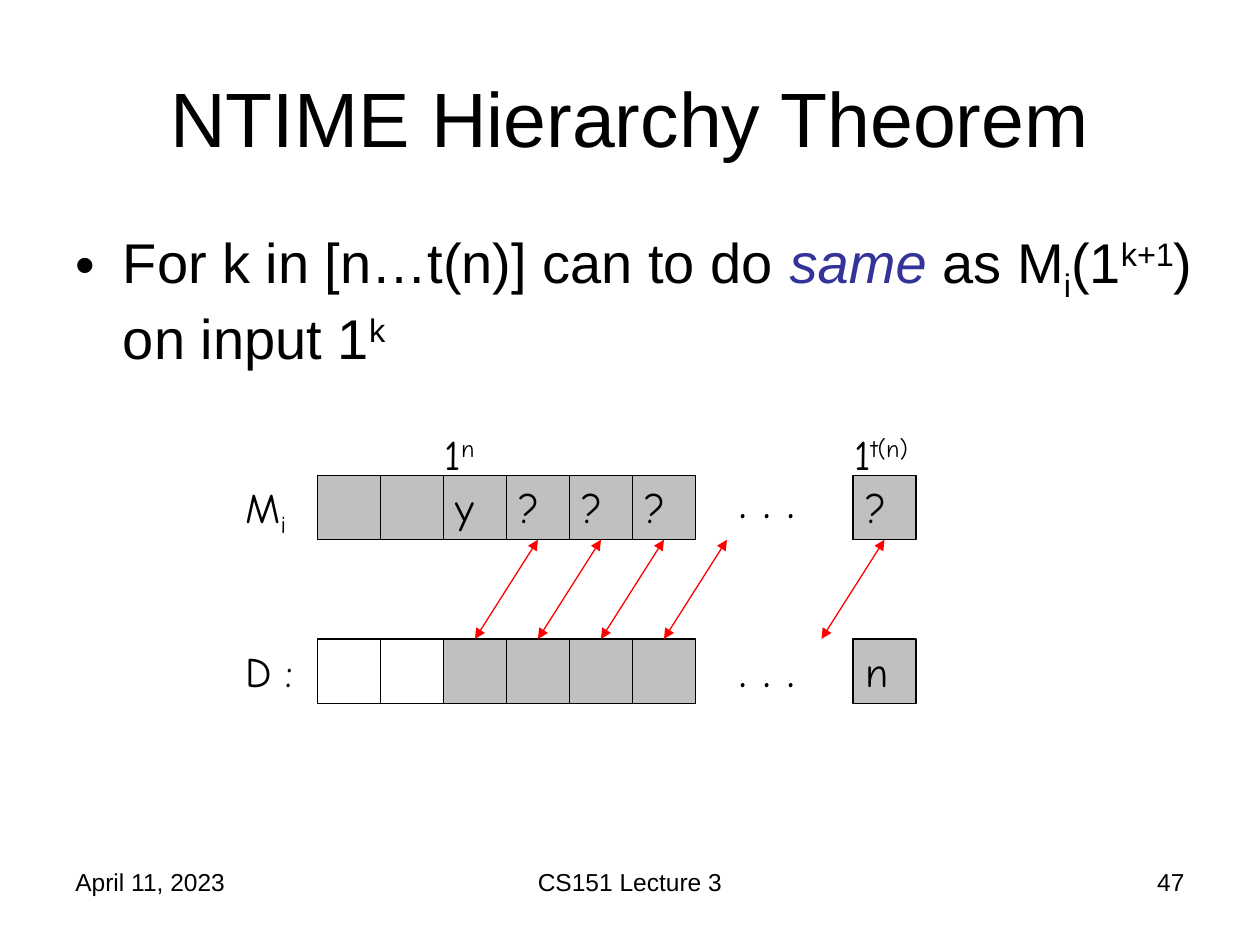
import pptx
import pptx.dml.color
import pptx.enum.shapes
import pptx.enum.text
import pptx.oxml
import pptx.util

Cm = pptx.util.Cm
Pt = pptx.util.Pt
ALIGN = pptx.enum.text.PP_ALIGN
ANCHOR = pptx.enum.text.MSO_ANCHOR
FIT = pptx.enum.text.MSO_AUTO_SIZE
KIND = pptx.enum.shapes

TITLE = {"size": Pt(44), "name": "Arial"}
BODY = {"size": Pt(32), "name": "Arial"}
FOOT = {"size": Pt(14), "name": "Arial"}
NOTE = {"size": Pt(24), "name": "Comic Neue"}
DOTS = {"size": Pt(28), "name": "Comic Neue"}
SUB, SUP = -25000, 30000
GRAY, BLACK, BLUE, RED = "C0C0C0", "000000", "333399", "FF0000"
LEFT, SIDE, TALL = 6.4, 1.27, 1.3
TOP, LOW = 9.58, 12.88
LAST = 8.5


def tint(code):
    """Turn a hex string into a colour."""
    return pptx.dml.color.RGBColor.from_string(code)


def apply(item, form):
    """Set each attribute named in a dict."""
    for key, value in form.items():
        setattr(item, key, value)


def place(shape, left, top, width, height):
    """Move and size a shape, in centimetres."""
    sides = {"left": left, "top": top, "width": width, "height": height}
    apply(shape, {key: Cm(value) for key, value in sides.items()})


def write(shape, parts, form, align=ALIGN.LEFT, anchor=ANCHOR.TOP, wrap=True):
    """Fill a shape with runs of text, base shift and colour."""
    frame = shape.text_frame
    apply(frame, {"auto_size": FIT.NONE, "word_wrap": wrap, "vertical_anchor": anchor})
    para = frame.paragraphs[0]
    para.alignment = align
    for text, base, code in parts:
        run = para.add_run()
        run.text = text
        apply(run.font, form)
        run.font.color.rgb = tint(code)
        if base:
            run._r.get_or_add_rPr().set("baseline", str(base))
        if code == BLUE:
            run.font.italic = True


def plain(text, base=0):
    """Describe one black run."""
    return text, base, BLACK


def label(slide, spot, parts, form, **more):
    """Add a text box."""
    box = slide.shapes.add_textbox(*map(Cm, spot))
    write(box, parts, form, **more)


def cell(slide, slot, top, text, fill):
    """Add one square of a tape row."""
    spot = (LEFT + slot * SIDE, top, SIDE, TALL)
    box = slide.shapes.add_shape(KIND.MSO_SHAPE.RECTANGLE, *map(Cm, spot))
    box.shadow.inherit = False
    if fill:
        box.fill.solid()
        box.fill.fore_color.rgb = tint(fill)
    else:
        box.fill.background()
    box.line.color.rgb = tint(BLACK)
    box.line.width = Pt(0.75)
    if text:
        write(box, [plain(text)], NOTE)
    return box


def row(slide, top, marks, fills):
    """Add a tape row and return its cells by slot."""
    slots = [*range(len(marks) - 1), LAST]
    return {slot: cell(slide, slot, top, mark, fill)
            for slot, mark, fill in zip(slots, marks, fills)}


def arrow(slide, slot, upper, lower):
    """Link an upper slot to the lower slot one step left."""
    head = LEFT + (slot + 0.5) * SIDE
    ends = (head, TOP + TALL, head - SIDE, LOW)
    line = slide.shapes.add_connector(KIND.MSO_CONNECTOR.STRAIGHT, *map(Cm, ends))
    if slot in upper:
        line.begin_connect(upper[slot], 2)
    if slot - 1 in lower:
        line.end_connect(lower[slot - 1], 0)
    line.line.color.rgb = tint(RED)
    line.line.width = Pt(0.75)
    space = pptx.oxml.ns.nsdecls("a")
    stroke = line.line._get_or_add_ln()
    for end in ("headEnd", "tailEnd"):
        stroke.append(pptx.oxml.parse_xml(f'<a:{end} {space} type="triangle"/>'))
    line._element.spPr.append(pptx.oxml.parse_xml(f"<a:effectLst {space}/>"))


def heads(slide):
    """Fill the title and body placeholders."""
    title, body = slide.shapes.title, slide.placeholders[1]
    place(title, 1.27, 0.76, 22.86, 3.18)
    write(title, [plain("NTIME Hierarchy Theorem")], TITLE,
          align=ALIGN.CENTER, anchor=ANCHOR.MIDDLE)
    place(body, 1.27, 4.45, 23.29, 12.57)
    write(body, [plain("For k in [n…t(n)] can to do "), ("same", 0, BLUE),
                 plain(" as M"), plain("i", SUB), plain("(1"), plain("k+1", SUP),
                 plain(") on input 1"), plain("k", SUP)], BODY)


def main():
    """Build and save the slide."""
    deck = pptx.Presentation()
    apply(deck, {"slide_width": Cm(25.4), "slide_height": Cm(19.05)})
    slide = deck.slides.add_slide(deck.slide_layouts[1])
    heads(slide)

    upper = row(slide, TOP, ["", "", "y", "?", "?", "?", "?"], [GRAY] * 7)
    lower = row(slide, LOW, [""] * 6 + ["n"], [None] * 2 + [GRAY] * 5)
    for slot in (3, 4, 5, 6, LAST):
        arrow(slide, slot, upper, lower)

    label(slide, (4.7, TOP, 1.42, 1.27), [plain("M"), plain("i", SUB)], NOTE, wrap=False)
    label(slide, (4.7, LOW, 2.11, 1.27), [plain("D :")], NOTE)
    for top in (9.35, 12.75):
        label(slide, (14.66, top, 2.11, 1.45), [plain(". . .")], DOTS)
    for left, width, power in ((8.71, 1.19, "n"), (16.97, 1.85, "t(n)")):
        label(slide, (left, 8.51, width, 1.27),
              [plain("1"), plain(power, SUP)], NOTE, wrap=False)

    for left, width, text, align in (
            (1.27, 5.92, "April 11, 2023", ALIGN.LEFT),
            (8.68, 8.04, "CS151 Lecture 3", ALIGN.CENTER),
            (18.21, 5.92, "47", ALIGN.RIGHT)):
        label(slide, (left, 17.35, width, 1.32), [plain(text)], FOOT, align=align)
    deck.save("out.pptx")


if __name__ == "__main__":
    main()
